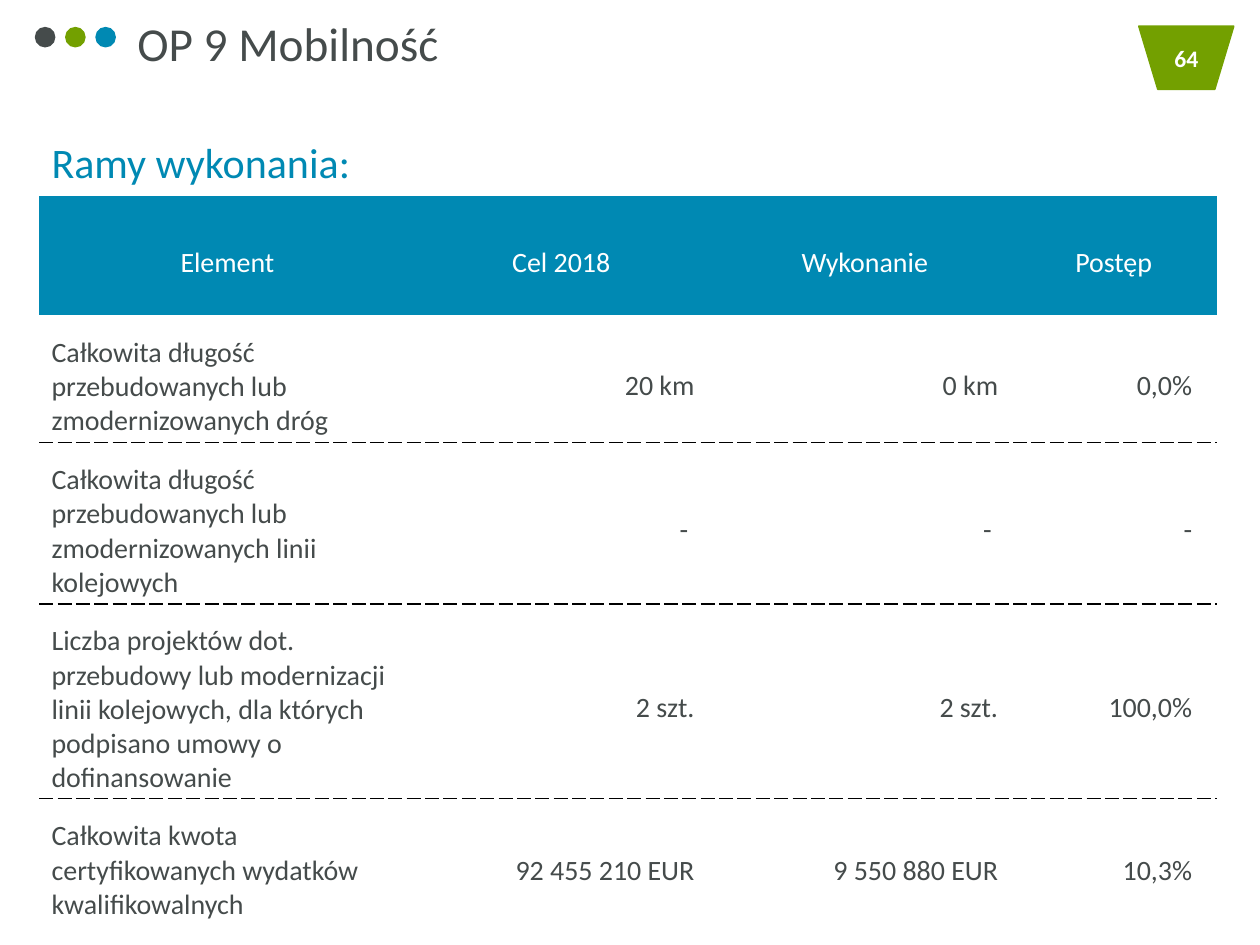
from lxml import etree
from pptx import Presentation
from pptx.dml.color import RGBColor
from pptx.enum import shapes, text
from pptx.oxml import parse_xml
from pptx.util import Cm, Pt

GRAPHITE, GREEN, BLUE, WHITE = "454B4B", "73A000", "0089B3", "FFFFFF"
DASHED_BOTTOM = (
    '<a:lnB xmlns:a="http://schemas.openxmlformats.org/drawingml/2006/main" w="12700">'
    '<a:solidFill><a:srgbClr val="000000"/></a:solidFill><a:prstDash val="dash"/></a:lnB>'
)
PLAIN_TABLE_STYLE = "{2D5ABB26-0587-4C30-8999-92F81FD0307C}"


def rgb(value):
    return RGBColor.from_string(value)


def format_paragraph(paragraph, size, color, align=text.PP_ALIGN.LEFT, bold=False):
    paragraph.alignment = align
    font = paragraph.font
    font.name, font.size, font.bold = "Calibri", Pt(size), bold
    font.color.rgb = rgb(color)


prs = Presentation()
prs.slide_width, prs.slide_height = Cm(25.4), Cm(19.05)
slide = prs.slides.add_slide(prs.slide_layouts[5])

# Page number badge and the three dots
badge = (shapes.MSO_SHAPE.FLOWCHART_MANUAL_OPERATION, 22.96, 0.53, 1.91, 1.27, GREEN)
dots = [
    (shapes.MSO_SHAPE.OVAL, 0.72 + 0.61 * i, 0.56, 0.38, 0.38, color)
    for i, color in enumerate([GRAPHITE, GREEN, BLUE])
]
for kind, left, top, width, height, color in [badge] + dots:
    mark = slide.shapes.add_shape(kind, Cm(left), Cm(top), Cm(width), Cm(height))
    mark.shadow.inherit = False
    mark.fill.solid()
    mark.fill.fore_color.rgb = rgb(color)
    mark.line.color.rgb = rgb(color)
    mark.line.width = Pt(1)
    if kind == badge[0]:
        mark.text_frame.text = "64"
        mark.text_frame.vertical_anchor = text.MSO_ANCHOR.MIDDLE
        format_paragraph(mark.text_frame.paragraphs[0], 13.5, WHITE,
                         text.PP_ALIGN.CENTER, bold=True)

# Title
title = slide.shapes.title
title.left, title.top, title.width, title.height = Cm(2.77), Cm(0.28), Cm(6.07), Cm(1.14)
heading = title.text_frame
heading.text = "OP 9 Mobilność"
heading.margin_left = heading.margin_right = heading.margin_top = heading.margin_bottom = 0
heading.vertical_anchor = text.MSO_ANCHOR.TOP
heading.word_wrap = False
heading.auto_size = text.MSO_AUTO_SIZE.SHAPE_TO_FIT_TEXT
format_paragraph(heading.paragraphs[0], 27, GRAPHITE)

# Subtitle
subtitle = slide.shapes.add_textbox(Cm(0.79), Cm(2.11), Cm(22.02), Cm(1.63)).text_frame
subtitle.word_wrap = True
subtitle.text = "Ramy wykonania:"
subtitle.paragraphs[0].line_spacing = 1.5
format_paragraph(subtitle.paragraphs[0], 24, BLUE)

# Performance table
rows = [
    ("Element", "Cel 2018", "Wykonanie", "Postęp"),
    ("Całkowita długość przebudowanych lub zmodernizowanych dróg",
     "20 km", "0 km", "0,0%"),
    ("Całkowita długość przebudowanych lub zmodernizowanych linii kolejowych",
     "- ", "- ", "-"),
    ("Liczba projektów dot. przebudowy lub modernizacji linii kolejowych, "
     "dla których podpisano umowy o dofinansowanie",
     "2 szt.", "2 szt.", "100,0%"),
    ("Całkowita kwota certyfikowanych wydatków kwalifikowalnych",
     "92 455 210 EUR", "9 550 880 EUR", "10,3%"),
]
column_widths = [7.59, 6.12, 6.12, 3.91]
row_heights = [2.39, 2.41, 2.87, 2.62, 2.62]

performance = slide.shapes.add_table(
    len(rows), len(column_widths), Cm(0.79), Cm(3.96),
    Cm(sum(column_widths)), Cm(sum(row_heights))).table
performance.first_row = performance.horz_banding = False
performance._tbl.tblPr[0].text = PLAIN_TABLE_STYLE
for column, width in zip(performance.columns, column_widths):
    column.width = Cm(width)
for row, height in zip(performance.rows, row_heights):
    row.height = Cm(height)

for r, values in enumerate(rows):
    for c, value in enumerate(values):
        cell = performance.cell(r, c)
        cell.text = value
        cell.vertical_anchor = text.MSO_ANCHOR.MIDDLE
        cell.margin_left, cell.margin_top, cell.margin_bottom = Cm(0.25), Cm(0.41), Cm(0.13)
        cell.margin_right = Cm(0.5 if c else 0.25)
        if r == 0:
            cell.fill.solid()
            cell.fill.fore_color.rgb = rgb(BLUE)
            align = text.PP_ALIGN.CENTER
        else:
            cell.fill.background()
            align = text.PP_ALIGN.RIGHT if c else text.PP_ALIGN.LEFT
        format_paragraph(cell.text_frame.paragraphs[0], 16, GRAPHITE if r else WHITE, align)
        # Dashed rule between body rows
        if 0 < r < len(rows) - 1:
            cell._tc.get_or_add_tcPr().insert(0, parse_xml(DASHED_BOTTOM))

prs.save("out.pptx")
